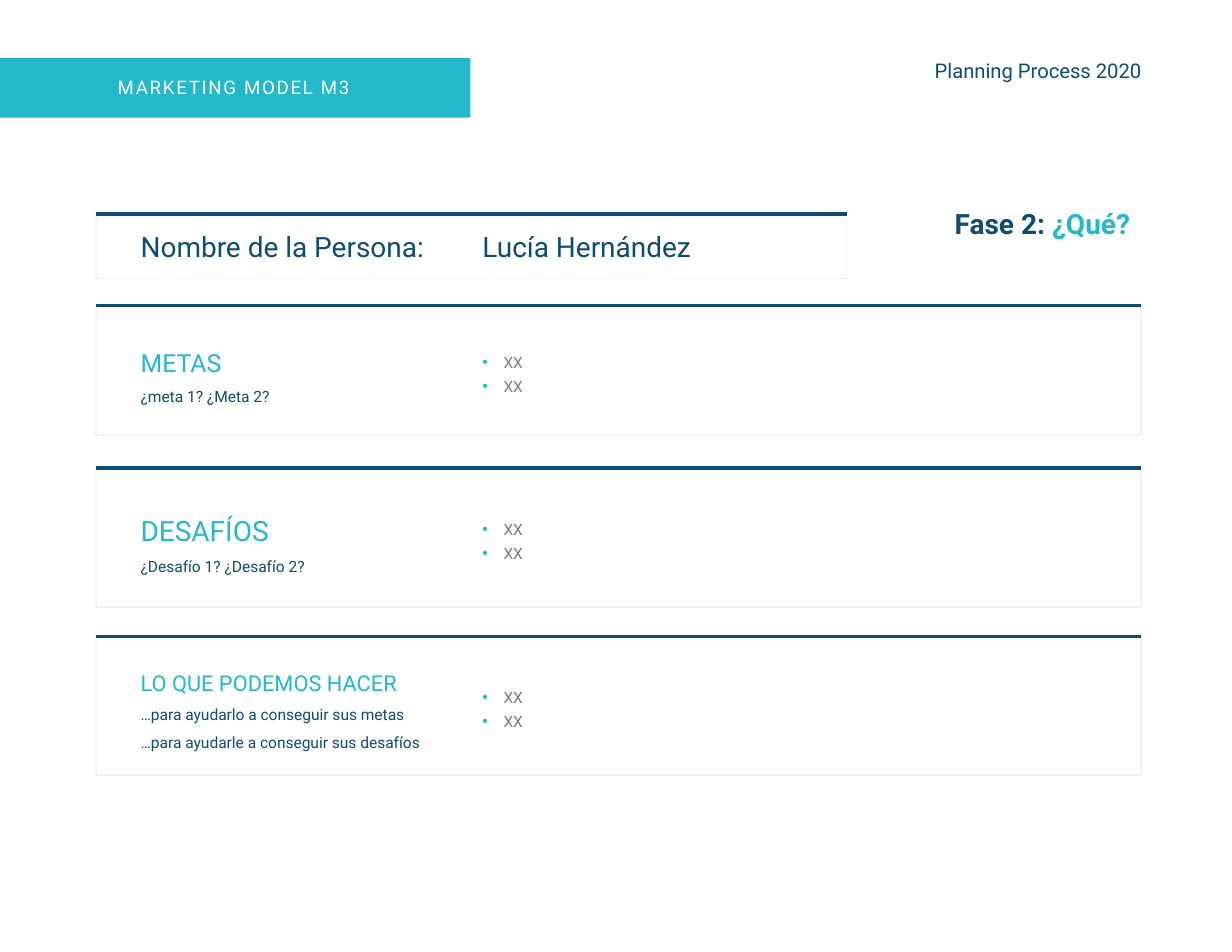
from lxml.etree import SubElement
from pptx import Presentation
from pptx.dml.color import RGBColor
from pptx.enum.shapes import MSO_CONNECTOR, MSO_SHAPE
from pptx.enum.text import MSO_AUTO_SIZE, PP_ALIGN
from pptx.oxml.ns import qn
from pptx.util import Cm, Pt

INK = {"navy": "0E4C71", "teal": "24B8CB", "gray": "7E7C7C",
       "edge": "F2F2F2", "white": "FFFFFF"}
LEFT, WIDE = 2.18, 23.7
LABEL_X, VALUE_X = 0.76, 8.51  # column offsets inside a panel
ROW = 1.02  # height of a one-line text box


def paint(hue):
    return RGBColor.from_string(INK[hue])


def apply(item, form):
    for name, value in form.items():
        setattr(item, name, value)


def add_text(slide, box, lines, wrap=True, inset=True, **form):
    """Each line is a list of runs: (text, size, hue, bold)."""
    frame = slide.shapes.add_textbox(*map(Cm, box)).text_frame
    apply(frame, {"word_wrap": wrap, "auto_size": MSO_AUTO_SIZE.SHAPE_TO_FIT_TEXT})
    if not inset:
        sides = ("left", "top", "right", "bottom")
        apply(frame, {f"margin_{side}": 0 for side in sides})
    for i, runs in enumerate(lines):
        para = frame.add_paragraph() if i else frame.paragraphs[0]
        apply(para, form)
        for text, size, hue, bold in runs:
            run = para.add_run()
            run.text = text
            apply(run.font, {"name": "Roboto", "size": Pt(size), "bold": bold})
            run.font.color.rgb = paint(hue)
    return frame


def add_bullet(para, hue):
    props = para._p.get_or_add_pPr()
    apply_xml = {"marL": Cm(0.48), "indent": -Cm(0.48)}
    for name, value in apply_xml.items():
        props.set(name, str(int(value)))
    color = SubElement(props, qn("a:buClr"))
    SubElement(color, qn("a:srgbClr"), val=INK[hue])
    SubElement(props, qn("a:buFont"), typeface="Arial")
    SubElement(props, qn("a:buChar"), char="•")


def add_panel(slide, box):
    # Pale frame
    x, y, w, h = box
    frame = slide.shapes.add_shape(MSO_SHAPE.RECTANGLE, *map(Cm, box))
    frame.shadow.inherit = False
    frame.fill.background()
    frame.line.color.rgb = paint("edge")
    frame.line.width = Pt(1)
    # Dark top rule
    rule = slide.shapes.add_connector(
        MSO_CONNECTOR.STRAIGHT, *map(Cm, (x, y, x + w, y)))
    rule.line.color.rgb = paint("navy")
    rule.line.width = Pt(2.25)
    SubElement(rule._element.spPr, qn("a:effectLst"))


def add_banner(slide, box):
    x, y, w, h = box
    band = slide.shapes.add_shape(MSO_SHAPE.RECTANGLE, *map(Cm, box))
    band.shadow.inherit = False
    band.fill.solid()
    band.fill.fore_color.rgb = paint("teal")
    band.line.fill.background()
    frame = add_text(slide, (x + 2.67, y + 0.4, 6, 0.52),
                     [[("MARKETING MODEL M3", 12, "white", False)]], inset=False)
    frame.paragraphs[0].runs[0].font._element.set("spc", "110")


def add_persona(slide, box):
    add_panel(slide, box)
    x, y, w, h = box
    top = y + (h - ROW) / 2
    for dx, wide, text in ((LABEL_X, 7.24, "Nombre de la Persona:"),
                           (VALUE_X, 6.91, "Lucía Hernández")):
        add_text(slide, (x + dx, top, wide, ROW), [[(text, 18, "navy", False)]])


def add_topic(slide, box, title, size, notes, label):
    add_panel(slide, box)
    x, y, w, h = box
    wide, high = label
    # Title and notes
    lines = [[(title, size, "teal", False)]]
    lines += [[(note, 10, "navy", False)] for note in notes]
    add_text(slide, (x + LABEL_X, y + (h - high) / 2 - 0.06, wide, high),
             lines, wrap=False, line_spacing=1.5)
    # Bulleted answers
    high = 1.32
    frame = add_text(slide, (x + VALUE_X, y + (h - high) / 2, 14.58, high),
                     [[("XX", 10, "gray", False)]] * 2,
                     line_spacing=1.3, alignment=PP_ALIGN.JUSTIFY)
    for para in frame.paragraphs:
        add_bullet(para, "teal")


def main():
    deck = Presentation()
    apply(deck, {"slide_width": Cm(27.94), "slide_height": Cm(21.59)})
    slide = deck.slides.add_slide(deck.slide_layouts[6])

    # Header
    add_banner(slide, (0, 1.32, 10.67, 1.35))
    add_text(slide, (20.19, 1.32, 5.69, 0.56),
             [[("Planning Process 2020", 13, "navy", False)]],
             inset=False, alignment=PP_ALIGN.RIGHT)
    add_text(slide, (21.23, 4.57, 4.65, ROW),
             [[("Fase 2: ", 18, "navy", True), ("¿Qué?", 18, "teal", True)]],
             wrap=False, alignment=PP_ALIGN.RIGHT)

    # Panels
    add_persona(slide, (LEFT, 4.85, 17.02, 1.47))
    topics = (
        (6.93, 2.95, "METAS", 16, ["¿meta 1? ¿Meta 2?"], (3.48, 1.85)),
        (10.62, 3.15, "DESAFÍOS", 18, ["¿Desafío 1? ¿Desafío 2?"], (4.24, 1.98)),
        (14.43, 3.15, "LO QUE PODEMOS HACER", 14,
         ["…para ayudarlo a conseguir sus metas",
          "…para ayudarle a conseguir sus desafíos"], (6.99, 2.36)),
    )
    for top, high, *parts in topics:
        add_topic(slide, (LEFT, top, WIDE, high), *parts)

    deck.save("out.pptx")


if __name__ == "__main__":
    main()
